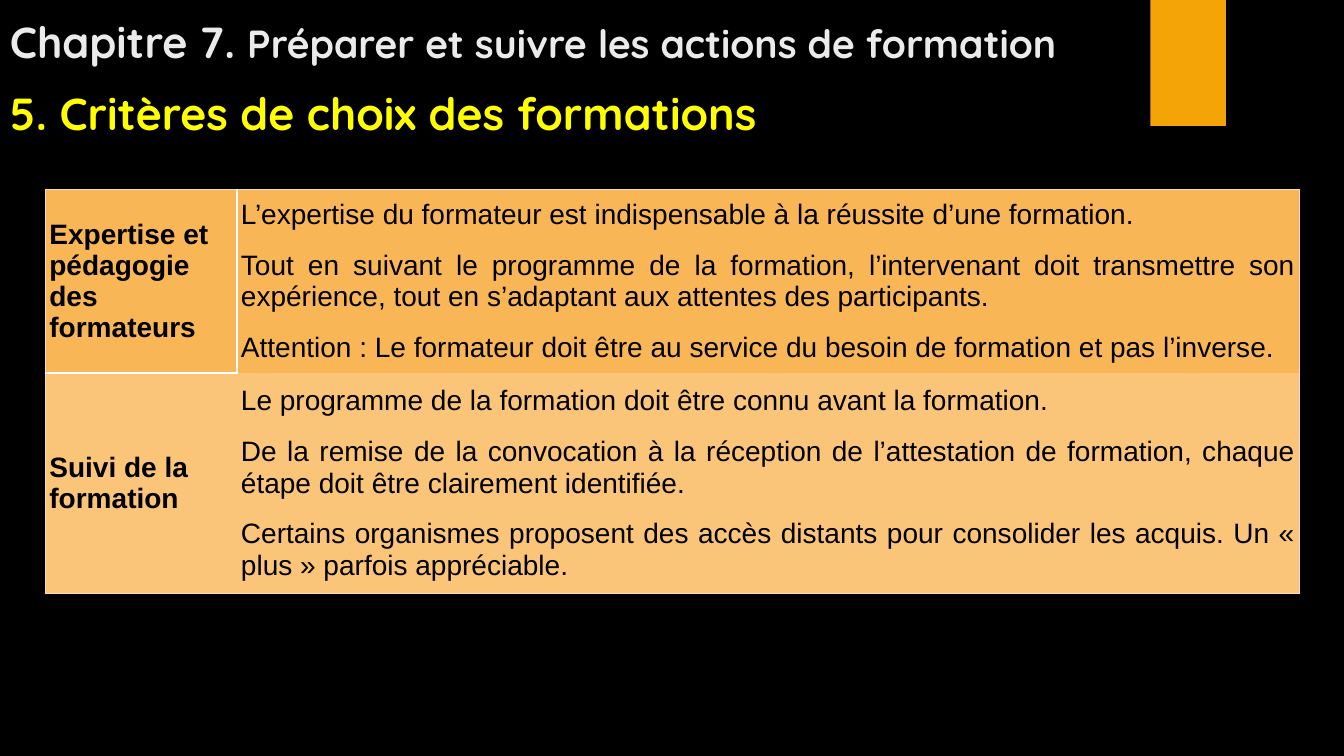
import pptx
import pptx.dml.color
import pptx.enum.shapes
import pptx.enum.text
import pptx.oxml
import pptx.oxml.ns
import pptx.util

RGB = pptx.dml.color.RGBColor
Inches, Pt = pptx.util.Inches, pptx.util.Pt
PP_ALIGN = pptx.enum.text.PP_ALIGN
ANCHOR = pptx.enum.text.MSO_ANCHOR

BLACK = RGB(0x00, 0x00, 0x00)
WHITE = RGB(0xFF, 0xFF, 0xFF)
PALE_GREY = RGB(0xEB, 0xEB, 0xEB)
YELLOW = RGB(0xFF, 0xFF, 0x00)
ORANGE = RGB(0xF5, 0xA4, 0x08)
PEACH = RGB(0xFA, 0xD8, 0xBD)
ROW_FILLS = [RGB(0xF9, 0xB6, 0x56), RGB(0xFA, 0xC5, 0x78)]

SLIDE_W, SLIDE_H = 13.33, 7.5
HEADING_W, HEADING_H = 12.9, 0.71
COL_WIDTHS = [1.9, 10.54]
ROW_HEIGHTS = [1.82, 2.19]

OUTER = (PEACH, 0.75)
# Borders of each cell: left, right, top, bottom
BORDERS = [
    [(OUTER, (WHITE, 1.5), OUTER, (WHITE, 2.25)), (None, OUTER, OUTER, None)],
    [(OUTER, None, None, OUTER), (None, OUTER, None, OUTER)],
]

CRITERIA = [
    ("Expertise et pédagogie des formateurs", [
        "L’expertise du formateur est indispensable à la réussite d’une formation.",
        "Tout en suivant le programme de la formation, l’intervenant doit transmettre "
        "son expérience, tout en s’adaptant aux attentes des participants.",
        "Attention : Le formateur doit être au service du besoin de formation "
        "et pas l’inverse.",
    ]),
    ("Suivi de la formation", [
        "Le programme de la formation doit être connu avant la formation.",
        "De la remise de la convocation à la réception de l’attestation de formation, "
        "chaque étape doit être clairement identifiée.",
        "Certains organismes proposent des accès distants pour consolider les acquis. "
        "Un « plus » parfois appréciable.",
    ]),
]


def format_font(font, name, size, color, bold):
    font.name, font.size, font.bold = name, Pt(size), bold
    font.color.rgb = color


def add_heading(s, line, parts, color):
    """Add a heading on the given line; parts are (text, size) pairs."""
    sp = s.shapes.add_textbox(0, Inches(0.01 + line * HEADING_H),
                              Inches(HEADING_W), Inches(HEADING_H))
    tf = sp.text_frame
    tf.word_wrap = True
    tf.vertical_anchor = ANCHOR.BOTTOM
    for text, size in parts:
        r = tf.paragraphs[0].add_run()
        r.text = text
        format_font(r.font, "Quicksand", size, color, True)


def add_ribbon(s):
    sp = s.shapes.add_shape(pptx.enum.shapes.MSO_SHAPE.RECTANGLE,
                            Inches(11.41), 0, Inches(0.75), Inches(SLIDE_H / 6))
    sp.shadow.inherit = False
    sp.fill.solid()
    sp.fill.fore_color.rgb = ORANGE
    sp.line.fill.background()


def set_borders(cell, borders):
    tc_pr = cell._tc.get_or_add_tcPr()
    for side, border in zip("LRTB", borders):
        if border:
            color, width = border
            size = f' w="{Pt(width)}"'
            paint = f'<a:solidFill><a:srgbClr val="{color}"/></a:solidFill>'
        else:
            size, paint = "", "<a:noFill/>"
        tc_pr.append(pptx.oxml.parse_xml(
            f'<a:ln{side} {pptx.oxml.ns.nsdecls("a")}{size}>{paint}</a:ln{side}>'))


def fill_cell(cell, paragraphs, color, borders, is_label):
    cell.margin_left = cell.margin_right = Inches(0.04)
    cell.margin_top = cell.margin_bottom = 0
    cell.vertical_anchor = ANCHOR.MIDDLE
    set_borders(cell, borders)
    cell.fill.solid()
    cell.fill.fore_color.rgb = color
    tf = cell.text_frame
    tf.text = "\n".join(paragraphs)
    for i, p in enumerate(tf.paragraphs):
        if not is_label:
            p.alignment = PP_ALIGN.JUSTIFY
            p.space_before = Pt(12 if i else 0)
            p.space_after = Pt(2)
        format_font(p.runs[0].font, "Arial", 20, BLACK, is_label)


def add_criteria_table(s):
    table = s.shapes.add_table(
        len(CRITERIA), len(COL_WIDTHS), Inches(0.45), Inches(1.88),
        Inches(sum(COL_WIDTHS)), Inches(sum(ROW_HEIGHTS))).table
    table.first_row = table.horz_banding = False
    for column, width in zip(table.columns, COL_WIDTHS):
        column.width = Inches(width)
    for i, (label, details) in enumerate(CRITERIA):
        table.rows[i].height = Inches(ROW_HEIGHTS[i])
        for j, paragraphs in enumerate([[label], details]):
            fill_cell(table.cell(i, j), paragraphs, ROW_FILLS[i],
                      BORDERS[i][j], is_label=j == 0)


def main():
    prs = pptx.Presentation()
    prs.slide_width, prs.slide_height = Inches(SLIDE_W), Inches(SLIDE_H)
    s = prs.slides.add_slide(prs.slide_layouts[6])
    s.background.fill.solid()
    s.background.fill.fore_color.rgb = BLACK
    add_ribbon(s)
    add_heading(s, 0, [("Chapitre 7. ", 31),
                       ("Préparer et suivre les actions de formation", 28)], PALE_GREY)
    add_heading(s, 1, [("5. Critères de choix des formations", 32)], YELLOW)
    add_criteria_table(s)
    prs.save("out.pptx")


if __name__ == "__main__":
    main()
